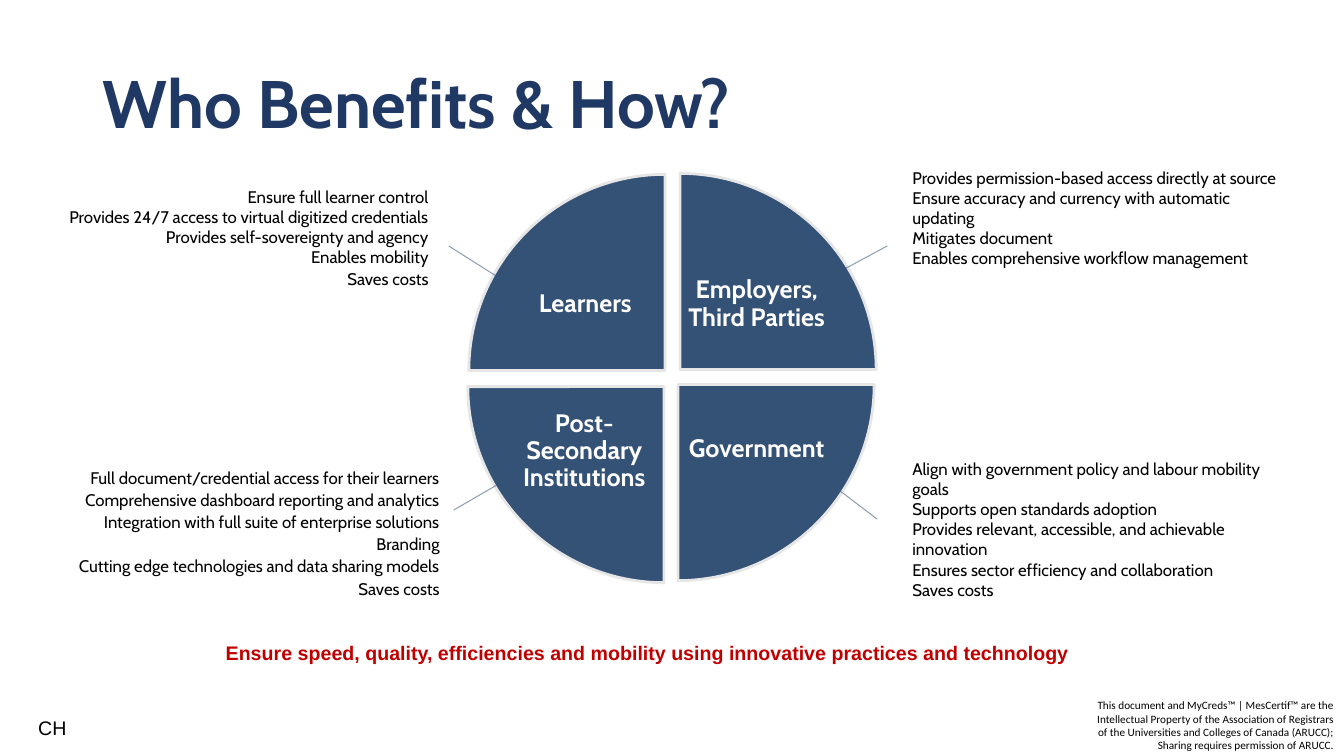
"""Build the slide on who benefits and how, with four pie quarters and their lists."""
from lxml import etree
from pptx import Presentation
from pptx.dml.color import RGBColor
from pptx.enum.shapes import MSO_CONNECTOR, MSO_SHAPE
from pptx.enum.text import MSO_ANCHOR, MSO_AUTO_SIZE, PP_ALIGN
from pptx.oxml.ns import qn
from pptx.util import Inches, Pt

COLORS = {"title": "203864", "quarter": "345176", "edge": "E7E6E6",
          "text": "000000", "white": "FFFFFF", "accent": "C00000"}


def rgb(name):
    return RGBColor.from_string(COLORS[name])


def add_text(s, box, lines, size, font="Cabin", color="text", bold=False,
             align=PP_ALIGN.LEFT, spacing=None):
    tf = s.shapes.add_textbox(*map(Inches, box)).text_frame
    tf.word_wrap = True
    tf.auto_size = MSO_AUTO_SIZE.SHAPE_TO_FIT_TEXT
    tf.text = "\n".join(lines)
    for p in tf.paragraphs:
        p.alignment = align
        p.line_spacing = spacing
        p.font.size = Pt(size)
        p.font.name = font
        p.font.bold = bold
        p.font.color.rgb = rgb(color)
    return tf


prs = Presentation()
prs.slide_width, prs.slide_height = Inches(13.33), Inches(7.5)
s = prs.slides.add_slide(prs.slide_layouts[5])

title = s.shapes.title
title.left, title.top, title.width, title.height = map(Inches, (0.92, 0.4, 11.5, 1.31))
tf = title.text_frame
tf.text = "Who Benefits & How?"
tf.vertical_anchor = MSO_ANCHOR.MIDDLE
p = tf.paragraphs[0]
p.alignment = PP_ALIGN.LEFT
p.line_spacing = 0.9
p.font.size = Pt(48)
p.font.name = "Cabin"
p.font.bold = True
p.font.color.rgb = rgb("title")

add_text(s, (10.77, 6.88, 2.56, 0.64), [
    "This document and MyCreds™ | MesCertif™ are the Intellectual Property of the "
    "Association of Registrars of the Universities and Colleges of Canada (ARUCC); "
    "Sharing requires permission of ARUCC."], 8, "Calibri", align=PP_ALIGN.RIGHT)

quarters = [
    ("Employers, Third Parties", 4.8, 1.72, 162, 0, 6.79, 2.44),
    ("Government", 4.78, 1.87, 0, 54, 6.79, 3.88),
    ("Post-Secondary Institutions", 4.64, 1.89, 54, 108, 5.08, 3.9),
    ("Learners", 4.65, 1.73, 108, 162, 5.09, 2.44),
]
for label, left, top, start, end, label_left, label_top in quarters:
    sp = s.shapes.add_shape(MSO_SHAPE.PIE, Inches(left), Inches(top), Inches(3.89), Inches(3.89))
    sp.adjustments[0], sp.adjustments[1] = start, end
    sp.shadow.inherit = False
    sp.fill.solid()
    sp.fill.fore_color.rgb = rgb("quarter")
    sp.line.color.rgb = rgb("edge")
    sp.line.width = Pt(2)
    tf = add_text(s, (label_left, label_top, 1.43, 1.16), [label], 18, color="white",
                  bold=True, align=PP_ALIGN.CENTER, spacing=0.9)
    tf.auto_size = MSO_AUTO_SIZE.NONE
    tf.vertical_anchor = MSO_ANCHOR.MIDDLE
    tf.margin_left = tf.margin_right = tf.margin_top = tf.margin_bottom = Inches(0.03)
    tf.paragraphs[0].space_after = Pt(6.3)

add_text(s, (0.26, 4.57, 4.2, 1.64), [
    "Full document/credential access for their learners",
    "Comprehensive dashboard reporting and analytics",
    "Integration with full suite of enterprise solutions",
    "Branding",
    "Cutting edge technologies and data sharing models",
    "Saves costs"], 12, align=PP_ALIGN.RIGHT, spacing=1.1)
add_text(s, (8.95, 4.5, 3.98, 1.51), [
    "Align with government policy and labour mobility goals",
    "Supports open standards adoption",
    "Provides relevant, accessible, and achievable innovation",
    "Ensures sector efficiency and collaboration",
    "Saves costs"], 12)
learners = add_text(s, (0.26, 1.8, 4.09, 1.11), [
    "Ensure full learner control",
    "Provides 24/7 access to virtual digitized credentials",
    "Provides self-sovereignty and agency",
    "Enables mobility",
    "Saves costs"], 12, align=PP_ALIGN.RIGHT)
learners.paragraphs[-1].line_spacing = 1.1
add_text(s, (8.95, 1.61, 3.98, 1.11), [
    "Provides permission-based access directly at source",
    "Ensure accuracy and currency with automatic updating",
    "Mitigates document",
    "Enables comprehensive workflow management"], 12)

leaders = [(5.05, 2.82, 4.45, 2.44), (8.7, 5.15, 8.24, 4.8),
           (5, 4.77, 4.5, 5.06), (8.8, 2.44, 8.3, 2.71)]
for ends in leaders:
    line = s.shapes.add_connector(MSO_CONNECTOR.STRAIGHT, *map(Inches, ends))
    line.line.color.rgb = rgb("quarter")
    line.line.width = Pt(0.75)
    sp_pr = line._element.spPr
    etree.SubElement(sp_pr.find(".//" + qn("a:srgbClr")), qn("a:alpha"), val="54000")
    etree.SubElement(sp_pr, qn("a:effectLst"))

add_text(s, (0.28, 7.05, 1.13, 0.34), ["CH"], 14, "Arial")
add_text(s, (2.14, 6.31, 9.05, 0.34), [
    "Ensure speed, quality, efficiencies and mobility using innovative practices and technology"],
    14, "Arial", "accent", True)

prs.save("out.pptx")
